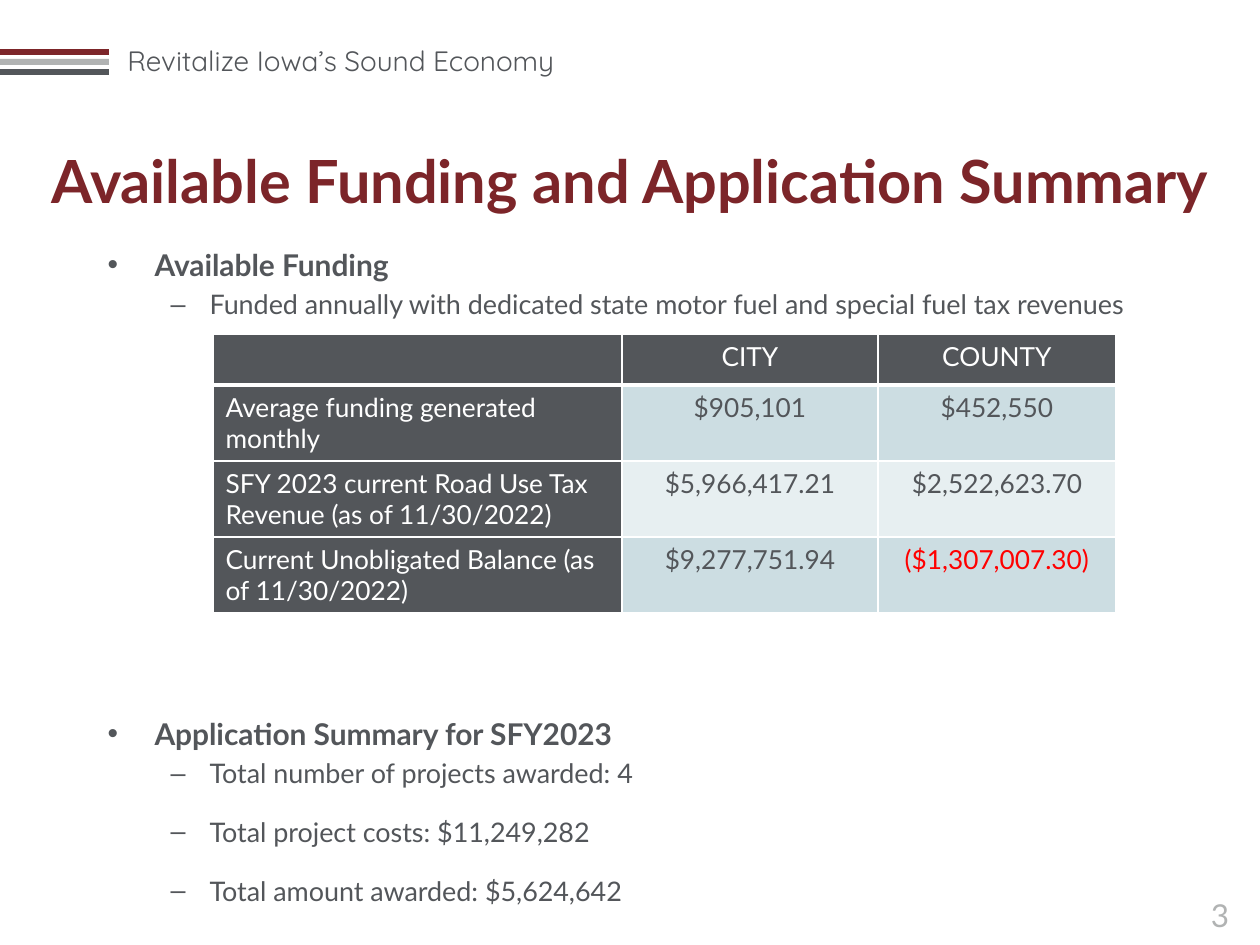
from dataclasses import dataclass

from lxml.etree import SubElement
from pptx import Presentation
from pptx.dml.color import RGBColor
from pptx.enum.shapes import MSO_SHAPE as Shape
from pptx.enum.text import MSO_ANCHOR as Anchor, MSO_AUTO_SIZE as AutoSize, PP_ALIGN as Align
from pptx.oxml.ns import qn
from pptx.util import Pt

PX = 914400 / 126
MAROON, SILVER, SLATE = "7C2529", "B1B3B3", "53565A"
WHITE, RED, BLUE, PALE = "FFFFFF", "FF0000", "CCDDE2", "E7EFF1"


@dataclass
class Box:
    left: int
    top: int
    width: int
    height: int

    def emu(self) -> list[int]:
        return [emu(v) for v in (self.left, self.top, self.width, self.height)]


@dataclass
class Level:
    depth: int
    bullet: str
    margin: int
    hang: int
    size: float
    bold: bool
    before: float
    after: float


@dataclass
class Item:
    text: str
    level: Level
    before: float | None = None


@dataclass
class Row:
    height: int
    texts: tuple[str, str, str]
    fill: str
    color: str = SLATE


HEADING = Level(0, "•", 47, 47, 17.1, True, 3.4, 0)
DETAIL = Level(1, "–", 102, 39, 15.4, False, 3.1, 12)
TABLE_GAP = 214  # points kept free above the second heading for the table

ITEMS = [
    Item("Available Funding", HEADING, 0),
    Item("Funded annually with dedicated state motor fuel and special fuel tax revenues", DETAIL),
    Item("Application Summary for SFY2023", HEADING, TABLE_GAP),
    Item("Total number of projects awarded: 4", DETAIL),
    Item("Total project costs: $11,249,282", DETAIL),
    Item("Total amount awarded: $5,624,642", DETAIL),
]

COLUMNS = (409, 256, 238)
ROWS = [
    Row(51, ("", "CITY", "COUNTY"), SLATE, WHITE),
    Row(76, ("Average funding generated monthly", "$905,101", "$452,550"), BLUE),
    Row(76, ("SFY 2023 current Road Use Tax Revenue (as of 11/30/2022)",
             "$5,966,417.21", "$2,522,623.70"), PALE),
    Row(76, ("Current Unobligated Balance (as of 11/30/2022)",
             "$9,277,751.94", "($1,307,007.30)"), BLUE),
]


def emu(px: int) -> int:
    return round(px * PX)


def rgb(value: str) -> RGBColor:
    return RGBColor.from_string(value)


def write(p, text: str, size: float, color: str, name: str = "Lato", bold: bool = False) -> None:
    r = p.add_run()
    r.text = text
    for key, value in {"name": name, "size": Pt(size), "bold": bold}.items():
        setattr(r.font, key, value)
    r.font.color.rgb = rgb(color)


def place(sp, box: Box):
    """Move a placeholder and return its text frame, ready to fill."""
    sp.left, sp.top, sp.width, sp.height = box.emu()
    tf = sp.text_frame
    tf.word_wrap, tf.auto_size = True, AutoSize.NONE
    return tf


def add_label(slide, box: Box, text: str, size: float, color: str, name: str, align: Align) -> None:
    tf = slide.shapes.add_textbox(*box.emu()).text_frame
    tf.word_wrap = True
    p = tf.paragraphs[0]
    p.alignment = align
    write(p, text, size, color, name)


def add_stripe(slide, box: Box, color: str) -> None:
    sp = slide.shapes.add_shape(Shape.RECTANGLE, *box.emu())
    sp.shadow.inherit = False
    sp.fill.solid()
    sp.fill.fore_color.rgb = rgb(color)
    sp.line.fill.background()


def add_item(p, item: Item) -> None:
    lv = item.level
    pPr = p._p.get_or_add_pPr()
    pPr.set("marL", str(emu(lv.margin)))
    pPr.set("indent", str(-emu(lv.hang)))
    SubElement(pPr, qn("a:buFont"), typeface="Arial")
    SubElement(pPr, qn("a:buChar"), char=lv.bullet)
    before = lv.before if item.before is None else item.before
    spacing = {"level": lv.depth, "space_before": Pt(before), "space_after": Pt(lv.after)}
    for key, value in spacing.items():
        setattr(p, key, value)
    write(p, item.text, lv.size, SLATE, bold=lv.bold)


def set_borders(cell, widths: dict[str, int]) -> None:
    """Draw white cell borders; must run before the cell's fill is set."""
    tcPr = cell._tc.get_or_add_tcPr()
    for side, width in widths.items():
        ln = SubElement(tcPr, qn(f"a:ln{side}"), w=str(Pt(width)))
        SubElement(SubElement(ln, qn("a:solidFill")), qn("a:srgbClr"), val=WHITE)


def add_funding_table(slide, left: int, top: int) -> None:
    box = Box(left, top, sum(COLUMNS), sum(row.height for row in ROWS))
    table = slide.shapes.add_table(len(ROWS), len(COLUMNS), *box.emu()).table
    table.horz_banding = False
    for column, width in zip(table.columns, COLUMNS):
        column.width = emu(width)
    for i, row in enumerate(ROWS):
        table.rows[i].height = emu(row.height)
        for j, text in enumerate(row.texts):
            cell = table.cell(i, j)
            set_borders(cell, {"L": 1, "R": 1, "T": 3 if i == 1 else 1, "B": 3 if i == 0 else 1})
            cell.fill.solid()
            cell.fill.fore_color.rgb = rgb(row.fill if j else SLATE)
            if not text:
                continue
            p = cell.text_frame.paragraphs[0]
            p.alignment = Align.CENTER if j else Align.LEFT
            color = RED if text.startswith("(") else row.color
            write(p, text, 15, color if j else WHITE)


def main() -> None:
    prs = Presentation()
    prs.slide_width, prs.slide_height = emu(1260), emu(945)
    slide = prs.slides.add_slide(prs.slide_layouts[1])
    title, body = slide.placeholders

    add_label(slide, Box(115, 37, 515, 46), "Revitalize Iowa’s Sound Economy",
              16, SLATE, "Quicksand", Align.LEFT)
    for i, color in enumerate((MAROON, SILVER, SLATE)):
        add_stripe(slide, Box(0, 49 + 10 * i, 109, 6), color)
    add_label(slide, Box(1180, 890, 80, 50), "3", 18, SILVER, "Lato", Align.CENTER)

    tf = place(title, Box(15, 155, 1230, 49))
    tf.vertical_anchor = Anchor.MIDDLE
    p = tf.paragraphs[0]
    p.alignment = Align.CENTER
    write(p, "Available Funding and Application Summary", 34, MAROON, bold=True)

    tf = place(body, Box(95, 240, 1071, 705))
    for i, item in enumerate(ITEMS):
        add_item(tf.add_paragraph() if i else tf.paragraphs[0], item)

    add_funding_table(slide, 213, 334)
    prs.save("out.pptx")


if __name__ == "__main__":
    main()
